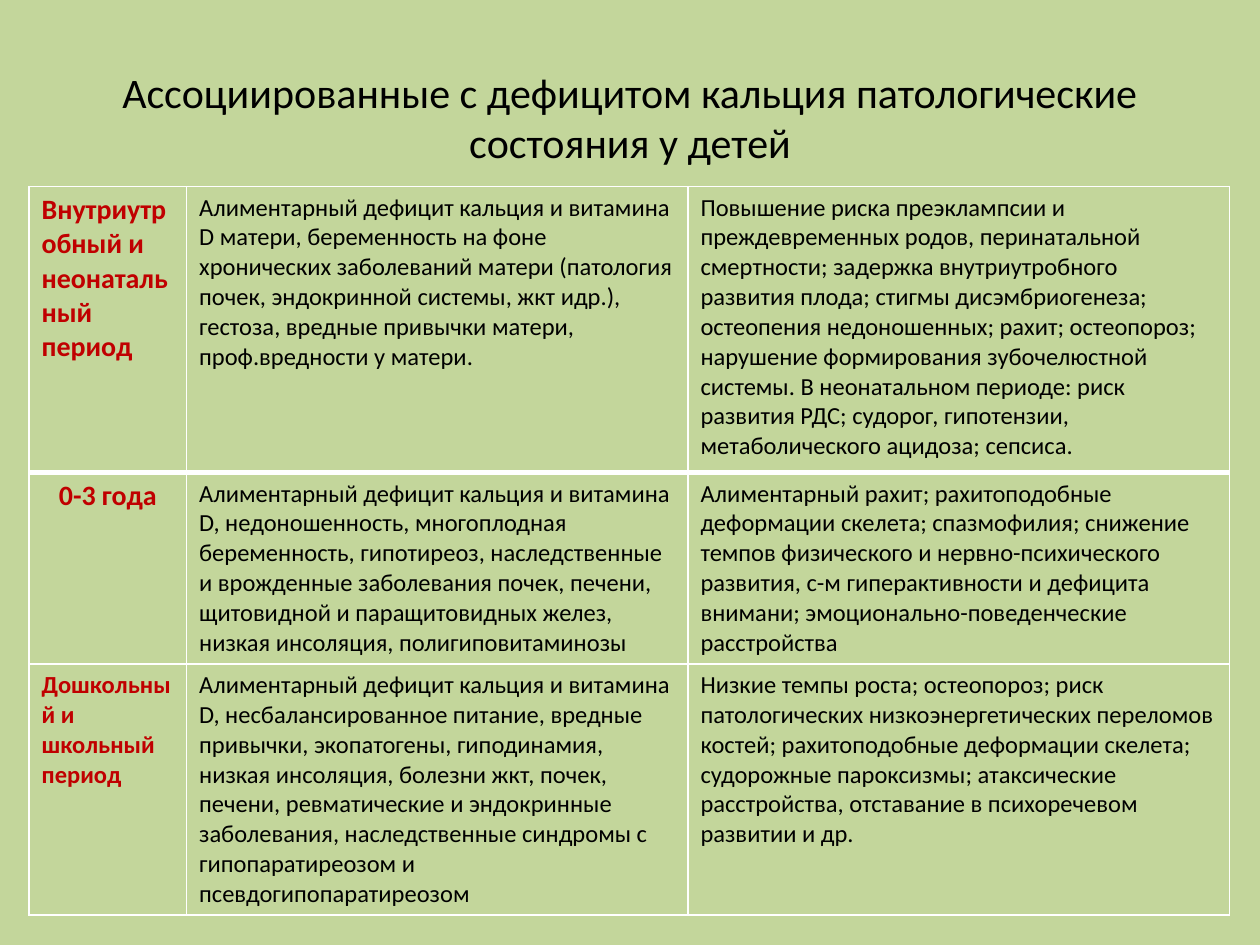
from lxml import etree
from pptx import Presentation
from pptx.dml.color import RGBColor
from pptx.enum.text import MSO_ANCHOR, PP_ALIGN
from pptx.oxml.ns import qn
from pptx.util import Pt

CENTER, LEFT = PP_ALIGN.CENTER, PP_ALIGN.LEFT
MIDDLE = MSO_ANCHOR.MIDDLE
GREEN, RED, BLACK, WHITE = "C3D69B", "C00000", "000000", "FFFFFF"


def format_paragraph(paragraph, size, color, bold=False, alignment=LEFT):
    paragraph.alignment = alignment
    for run in paragraph.runs:
        run.font.name = "Calibri"
        run.font.size = Pt(size)
        run.font.bold = bold
        run.font.color.rgb = RGBColor.from_string(color)


def add_border(cell, side, width):
    line = etree.SubElement(cell._tc.get_or_add_tcPr(), qn("a:" + side), w=str(Pt(width)))
    fill = etree.SubElement(line, qn("a:solidFill"))
    etree.SubElement(fill, qn("a:srgbClr"), val=WHITE)


presentation = Presentation()
presentation.slide_width, presentation.slide_height = Pt(720), Pt(540)
slide = presentation.slides.add_slide(presentation.slide_layouts[5])
slide.background.fill.solid()
slide.background.fill.fore_color.rgb = RGBColor.from_string(GREEN)

# Title
title = slide.shapes.title
title.left, title.top, title.width, title.height = Pt(36), Pt(21.6), Pt(648), Pt(90)
title.text_frame.text = "Ассоциированные с дефицитом кальция патологические состояния у детей"
title.text_frame.vertical_anchor = MIDDLE
format_paragraph(title.text_frame.paragraphs[0], 24, BLACK, alignment=CENTER)

# Periods: name, name size, name alignment, causes, conditions
periods = [
    ("Внутриутробный и неонатальный период", 16, LEFT,
     "Алиментарный дефицит кальция и витамина D матери, беременность на фоне "
     "хронических заболеваний матери (патология почек, эндокринной системы, жкт идр.), "
     "гестоза, вредные привычки матери, проф.вредности у матери.",
     "Повышение риска преэклампсии и преждевременных родов, перинатальной смертности; "
     "задержка внутриутробного развития плода; стигмы дисэмбриогенеза; остеопения "
     "недоношенных; рахит; остеопороз; нарушение формирования зубочелюстной системы. "
     "В неонатальном периоде: риск развития РДС; судорог, гипотензии, метаболического "
     "ацидоза; сепсиса."),
    ("0-3 года", 16, CENTER,
     "Алиментарный дефицит кальция и витамина D, недоношенность, многоплодная "
     "беременность, гипотиреоз, наследственные и врожденные заболевания почек, печени, "
     "щитовидной и паращитовидных желез, низкая инсоляция, полигиповитаминозы",
     "Алиментарный рахит; рахитоподобные деформации скелета; спазмофилия; снижение "
     "темпов физического и нервно-психического развития, с-м гиперактивности и дефицита "
     "внимани; эмоционально-поведенческие расстройства"),
    ("Дошкольный и школьный период", 14, LEFT,
     "Алиментарный дефицит кальция и витамина D, несбалансированное питание, вредные "
     "привычки, экопатогены, гиподинамия, низкая инсоляция, болезни жкт, почек, печени, "
     "ревматические и эндокринные заболевания, наследственные синдромы с "
     "гипопаратиреозом и псевдогипопаратиреозом",
     "Низкие темпы роста; остеопороз; риск патологических низкоэнергетических переломов "
     "костей; рахитоподобные деформации скелета; судорожные пароксизмы; атаксические "
     "расстройства, отставание в психоречевом развитии и др."),
]

# Table grid
column_widths = [90, 286.5, 309.6]
row_heights = [163.4, 109, 143]
table = slide.shapes.add_table(
    len(row_heights), len(column_widths),
    Pt(16.6), Pt(106.6), Pt(sum(column_widths)), Pt(sum(row_heights))).table
for column, width in zip(table.columns, column_widths):
    column.width = Pt(width)
for row, height in zip(table.rows, row_heights):
    row.height = Pt(height)

# Table cells, with a thick rule below the first row
for row_index, (name, name_size, name_alignment, causes, conditions) in enumerate(periods):
    for column_index, text in enumerate([name, causes, conditions]):
        cell = table.cell(row_index, column_index)
        cell.text_frame.text = text
        paragraph = cell.text_frame.paragraphs[0]
        if column_index == 0:
            format_paragraph(paragraph, name_size, RED, True, name_alignment)
        else:
            format_paragraph(paragraph, 14, BLACK)
        add_border(cell, "lnL", 1)
        add_border(cell, "lnR", 1)
        add_border(cell, "lnT", 3 if row_index == 1 else 1)
        add_border(cell, "lnB", 3 if row_index == 0 else 1)
        cell.fill.solid()
        cell.fill.fore_color.rgb = RGBColor.from_string(GREEN)

presentation.save("out.pptx")
